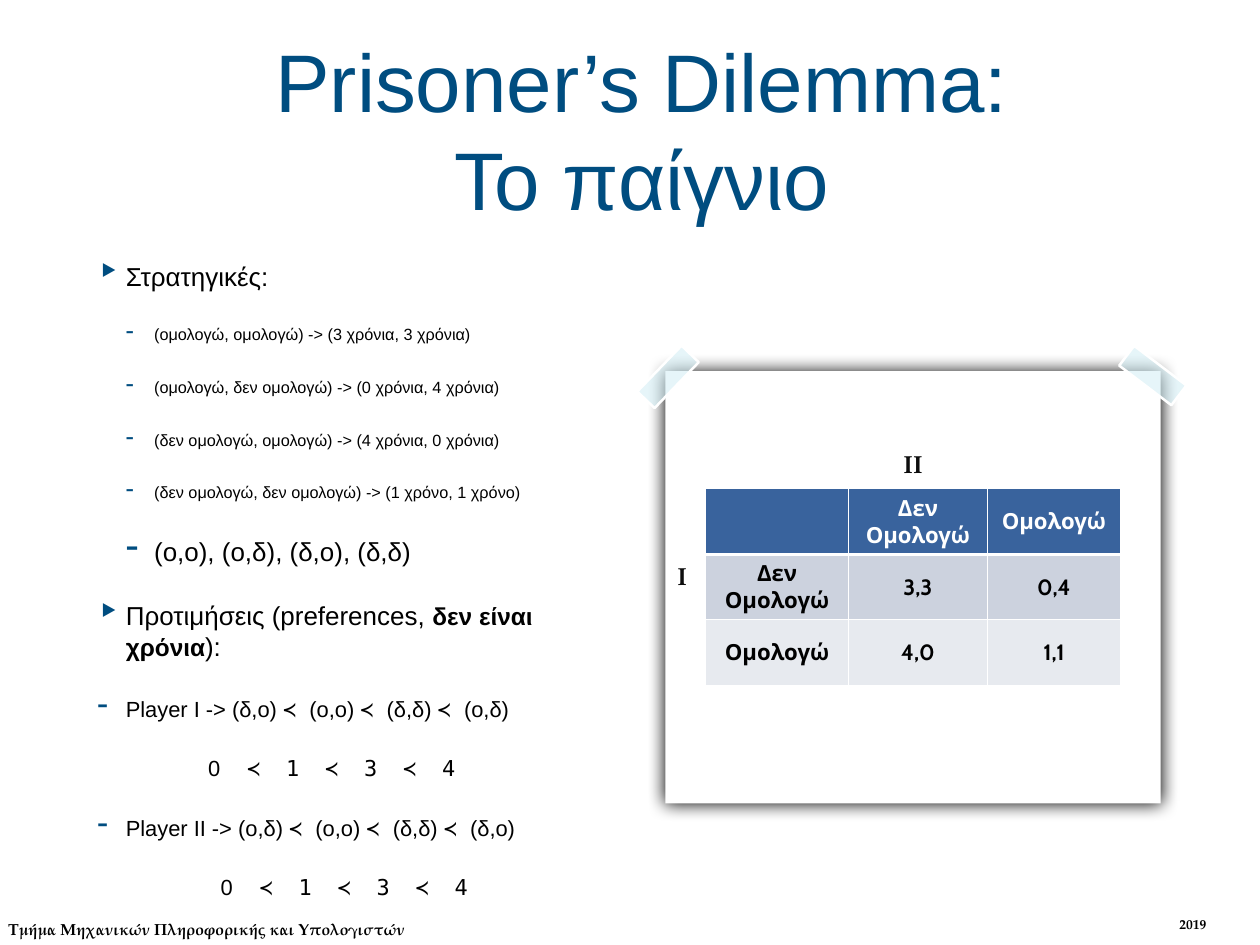
import pptx
import pptx.dml.color
import pptx.enum.shapes
import pptx.enum.text
import pptx.oxml
import pptx.oxml.ns
import pptx.util

EMU_PER_PX = 9144
SERIF = "TeX Gyre Pagella"
MONO = "DejaVu Sans Mono"
NAVY = "004D80"
NAMESPACE = pptx.oxml.ns.nsdecls("a")
ALIGN = pptx.enum.text.PP_ALIGN
MIDDLE = pptx.enum.text.MSO_ANCHOR.MIDDLE
TOP = pptx.enum.text.MSO_ANCHOR.TOP


def px(length):
    return pptx.util.Emu(length * EMU_PER_PX)


def color(value):
    return pptx.dml.color.RGBColor.from_string(value)


def append_xml(parent, tag, inner, attributes=""):
    parent.append(pptx.oxml.parse_xml(f"<a:{tag} {NAMESPACE} {attributes}>{inner}</a:{tag}>"))


def set_margins(target, margin):
    target.margin_left = target.margin_right = px(margin)
    target.margin_top = target.margin_bottom = px(margin)


def write_span(para, text, size=18, font="Arial", ink="000000", bold=False):
    span = para.add_run()
    span.text = text
    span.font.size = pptx.util.Pt(size)
    span.font.name = font
    span.font.bold = bold
    span.font.color.rgb = color(ink)


def format_para(para, align=ALIGN.LEFT, indent=0, bullet=None, tabs=(), before=0, spacing=None):
    properties = para._p.get_or_add_pPr()
    if bullet:
        properties.set("marL", str(px(indent)))
        properties.set("indent", str(px(-32)))
        append_xml(properties, "buClr", f'<a:srgbClr val="{NAVY}"/>')
        append_xml(properties, "buSzPct", "", 'val="145000"')
        append_xml(properties, "buChar", "", f'char="{bullet}"')
    if tabs:
        stops = "".join(f'<a:tab pos="{px(stop)}" algn="l"/>' for stop in tabs)
        append_xml(properties, "tabLst", stops)
    para.alignment = align
    para.space_before = pptx.util.Pt(before)
    if spacing:
        para.line_spacing = pptx.util.Pt(spacing)


def add_frame(page, box, margin=5, anchor=TOP):
    frame = page.shapes.add_textbox(*map(px, box)).text_frame
    frame.word_wrap = True
    frame.vertical_anchor = anchor
    set_margins(frame, margin)
    return frame


def next_para(frame):
    first = frame.paragraphs[0]
    return frame.add_paragraph() if first.runs else first


def add_label(page, box, lines, align=ALIGN.CENTER, margin=5, anchor=TOP, spacing=None, **style):
    frame = add_frame(page, box, margin, anchor)
    for line in lines:
        para = next_para(frame)
        format_para(para, align, spacing=spacing)
        write_span(para, line, **style)


def add_rectangle(page, box, fill, line=None, rotation=0, opacity=None):
    kind = pptx.enum.shapes.MSO_SHAPE.RECTANGLE
    shape = page.shapes.add_shape(kind, *map(px, box))
    shape.shadow.inherit = False
    shape.rotation = rotation
    shape.fill.solid()
    shape.fill.fore_color.rgb = color(fill)
    if opacity:
        tint = shape._element.spPr.find(".//" + pptx.oxml.ns.qn("a:srgbClr"))
        append_xml(tint, "alpha", "", f'val="{opacity * 1000}"')
    if line:
        shape.line.color.rgb = color(line)
        shape.line.width = pptx.util.Pt(2)
    else:
        shape.line.fill.background()
    return shape


def add_card(page, box):
    card = add_rectangle(page, box, "FFFFFF")
    effects = card._element.spPr.find(pptx.oxml.ns.qn("a:effectLst"))
    blur, distance = pptx.util.Pt(15), pptx.util.Pt(0.7)
    append_xml(effects, "outerShdw", '<a:srgbClr val="000000"/>',
               f'blurRad="{blur}" dist="{distance}" dir="5400000" rotWithShape="0"')


def add_grid(page, left, top, widths, row_height, rows):
    size = (sum(widths), row_height * len(rows))
    table = page.shapes.add_table(len(rows), len(widths), *map(px, (left, top, *size))).table
    table.first_row = table.horz_banding = False
    for column, width in zip(table.columns, widths):
        column.width = px(width)
    for row in table.rows:
        row.height = px(row_height)
    return table


def fill_cell(cell, text, fill=None, align=ALIGN.CENTER, margin=5, anchor=MIDDLE, **style):
    set_margins(cell, margin)
    cell.vertical_anchor = anchor
    if fill:
        cell.fill.solid()
        cell.fill.fore_color.rgb = color(fill)
    else:
        cell.fill.background()
    para = cell.text_frame.paragraphs[0]
    para.alignment = align
    if text:
        write_span(para, text, **style)


def set_borders(cell, **widths):
    properties = cell._tc.get_or_add_tcPr()
    for index, side in enumerate("LRTB"):
        width = pptx.util.Pt(widths.get(side, 1))
        line = pptx.oxml.parse_xml(
            f'<a:ln{side} {NAMESPACE} w="{width}"><a:solidFill>'
            f'<a:srgbClr val="FFFFFF"/></a:solidFill></a:ln{side}>')
        properties.insert(index, line)


def add_payoffs(page):
    rows = [
        ("", "Δεν Ομολογώ", "Ομολογώ"),
        ("Δεν Ομολογώ", "3,3", "0,4"),
        ("Ομολογώ", "4,0", "1,1"),
    ]
    fills = ("39639D", "CCD2DE", "E7EAEF")
    heavy_sides = ({"B": 3}, {"T": 3}, {})
    table = add_grid(page, 796, 552, (162, 156, 151), 74, rows)
    for row, (texts, fill, heavy) in enumerate(zip(rows, fills, heavy_sides)):
        ink = "000000" if row else "FFFFFF"
        for column, text in enumerate(texts):
            cell = table.cell(row, column)
            fill_cell(cell, text, fill, size=18, font="Cabin", ink=ink, bold=True)
            set_borders(cell, **heavy)


def add_point(frame, spans, bullet="-", indent=32, tabs=()):
    para = next_para(frame)
    before = 27 if len(frame.paragraphs) > 1 else 0
    format_para(para, indent=indent, bullet=bullet, tabs=tabs, before=before)
    for text, style in spans:
        write_span(para, text, **style)


def add_preferences(frame, player, outcomes, start):
    plain = {"size": 17.8}
    mono = {"size": 17.8, "font": MONO}
    spans = [(f"{player} -> ", plain)]
    for outcome in outcomes[:-1]:
        spans += [(outcome + " ", plain), ("≺ ", mono)]
    add_point(frame, spans + [(outcomes[-1], plain)])
    stops = [start + 44 * step for step in range(7)]
    values = [("\t0", plain), ("\t≺\t1\t≺\t3\t≺\t4", mono)]
    add_point(frame, values, bullet=None, tabs=stops)


def add_strategies(page):
    frame = add_frame(page, (104, 283, 616, 744), margin=6, anchor=MIDDLE)
    large = {"size": 21.1}
    add_point(frame, [("Στρατηγικές:", large)], "‣")
    for outcome in (
        "(ομολογώ, ομολογώ) -> (3 χρόνια, 3 χρόνια)",
        "(ομολογώ, δεν ομολογώ) -> (0 χρόνια, 4 χρόνια)",
        "(δεν ομολογώ, ομολογώ) -> (4 χρόνια, 0 χρόνια)",
        "(δεν ομολογώ, δεν ομολογώ) -> (1 χρόνο, 1 χρόνο)",
    ):
        add_point(frame, [(outcome, {"size": 13.2})], indent=64)
    add_point(frame, [("(ο,ο), (ο,δ), (δ,ο), (δ,δ)", large)], indent=64)
    add_point(frame, [
        ("Προτιμήσεις (preferences, ", large),
        ("δεν είναι χρόνια", {"size": 19.8, "bold": True}),
        ("):", large),
    ], "‣")
    add_preferences(frame, "Player I", ("(δ,ο)", "(ο,ο)", "(δ,δ)", "(ο,δ)"), 125)
    add_preferences(frame, "Player II", ("(ο,δ)", "(ο,ο)", "(δ,δ)", "(δ,ο)"), 139)


def main():
    deck = pptx.Presentation()
    deck.slide_width, deck.slide_height = px(1422), px(1067)
    page = deck.slides.add_slide(deck.slide_layouts[6])
    add_label(page, (2, 1033, 460, 32), ["Τμήμα Μηχανικών Πληροφορικής και Υπολογιστών"],
              align=ALIGN.RIGHT, size=13, font=SERIF, bold=True)
    year = add_grid(page, 1324, 1032, (57,), 33, ["2019"])
    fill_cell(year.cell(0, 0), "2019", align=ALIGN.LEFT, margin=7, anchor=TOP,
              size=11, font=SERIF, bold=True)
    add_card(page, (751, 419, 559, 488))
    add_payoffs(page)
    player = {"size": 20, "font": SERIF, "ink": "0D0D0D", "bold": True}
    add_label(page, (747, 414, 46, 483), ["I"], anchor=MIDDLE, spacing=16, **player)
    for box, rotation in (((1264, 410, 74, 28), 37.2), ((718, 412, 72, 27), 313.9)):
        add_rectangle(page, box, "D3EEF5", "FFFFFF", rotation, opacity=56)
    add_label(page, (789, 502, 483, 46), ["II"], **player)
    add_label(page, (117, 28, 1214, 236), ["Prisoner’s Dilemma:", "Το παίγνιο"],
              margin=6, anchor=MIDDLE, size=66.4, ink=NAVY)
    add_strategies(page)
    deck.save("out.pptx")


if __name__ == "__main__":
    main()
